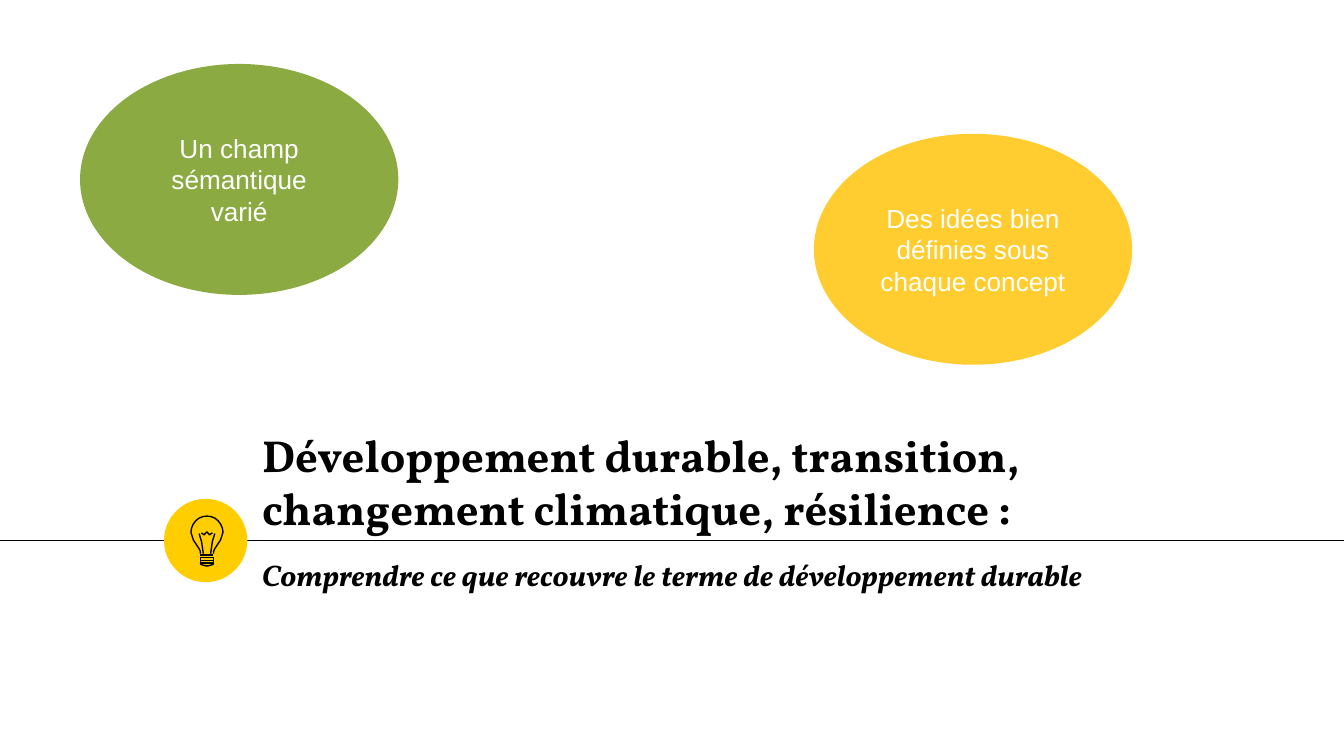
"""Build a section slide with a title, a light bulb badge and two idea bubbles."""
from dataclasses import dataclass
from typing import Any

import pptx
import pptx.dml.color
import pptx.enum.shapes
import pptx.enum.text
import pptx.oxml
import pptx.util

CELL = pptx.util.Inches(0.1)
COLUMNS, ROWS = 100, 56.25
RULE_ROW = 40.22
TEXT_COLUMN, TEXT_WIDTH = 18.5, 77.7
BULB_AXIS = 15.4
BLACK, WHITE, GOLD = "000000", "FFFFFF", "FFCD00"
ALIGN = pptx.enum.text.PP_ALIGN
ANCHOR = pptx.enum.text.MSO_ANCHOR


@dataclass(frozen=True)
class Box:
    left: float
    top: float
    width: float
    height: float


@dataclass(frozen=True)
class Bubble:
    text: str
    box: Box
    color: str


@dataclass(frozen=True)
class Stroke:
    points: tuple[tuple[float, float], ...]
    closed: bool = False


BUBBLES = (
    Bubble("Un champ sémantique varié", Box(6.1, 4.9, 23.4, 16.9), "8BAB42"),
    Bubble("Des idées bien définies sous chaque concept", Box(60.7, 10.1, 23.4, 16.9), "FFCD2F"),
)


def mirrored(half: tuple[tuple[float, float], ...], closed: bool = False) -> Stroke:
    """Complete a half outline, given as offsets from the bulb axis."""
    left = tuple((BULB_AXIS - offset, row) for offset, row in half)
    right = tuple((BULB_AXIS + offset, row) for offset, row in reversed(half))
    return Stroke(left + right, closed)


GLASS = mirrored((
    (0.48, 41.2), (0.5, 41), (0.6, 40.8), (0.8, 40.5), (1, 40.2), (1.1, 39.9),
    (1.19, 39.6), (1.15, 39.3), (1.02, 39), (0.83, 38.75), (0.6, 38.56),
    (0.31, 38.44), (0, 38.4)))
THREADS = tuple(
    mirrored(((0.48, top), (0.48, top + 0.2)), closed=True) for top in (41.5, 41.7))
CAP = mirrored(((0.48, 41.9), (0.45, 42), (0.1, 42.1)), closed=True)
WIRES = tuple(
    Stroke(tuple((BULB_AXIS + side * offset, row)
                 for offset, row in ((0.58, 39.7), (0.4, 40.3), (0.27, 41.2))))
    for side in (-1, 1))
FILAMENT = mirrored(((0.41, 39.65), (0.2, 39.8), (0.03, 39.6)))
BULB = (GLASS, *THREADS, CAP, *WIRES, FILAMENT)


def cells(count: float) -> int:
    """Convert grid cells to a length."""
    return pptx.util.Emu(round(count * CELL))


def rgb(color: str) -> pptx.dml.color.RGBColor:
    """Convert a hex string to a colour."""
    return pptx.dml.color.RGBColor.from_string(color)


def place(shape: Any, box: Box) -> None:
    """Move and size a shape on the grid."""
    shape.left, shape.top = cells(box.left), cells(box.top)
    shape.width, shape.height = cells(box.width), cells(box.height)


def write(shape: Any, text: str, size: float, font_name: str, color: str,
          align: Any, anchor: Any, bold: bool = False, italic: bool = False) -> None:
    """Put one formatted paragraph in a shape."""
    frame = shape.text_frame
    frame.text = text
    frame.word_wrap = True
    frame.auto_size = pptx.enum.text.MSO_AUTO_SIZE.NONE
    frame.vertical_anchor = anchor
    frame.margin_left = frame.margin_right = cells(1)
    frame.margin_top = frame.margin_bottom = cells(1)
    paragraph = frame.paragraphs[0]
    paragraph.alignment = align
    font = paragraph.runs[0].font
    font.size, font.name = pptx.util.Pt(size), font_name
    font.bold, font.italic = bold, italic
    font.color.rgb = rgb(color)


def add_ellipse(slide: Any, box: Box, color: str, line_width: float = 0) -> Any:
    """Draw a filled ellipse, outlined in its own colour if a width is given."""
    shape = slide.shapes.add_shape(pptx.enum.shapes.MSO_SHAPE.OVAL, 0, 0, 0, 0)
    place(shape, box)
    shape.shadow.inherit = False
    shape.fill.solid()
    shape.fill.fore_color.rgb = rgb(color)
    if line_width:
        shape.line.color.rgb = rgb(color)
        shape.line.width = pptx.util.Pt(line_width)
    else:
        shape.line.fill.background()
    return shape


def ink(shape: Any) -> None:
    """Give a shape or connector a thin black line."""
    shape.line.color.rgb = rgb(BLACK)
    shape.line.width = pptx.util.Pt(0.75)


def add_level_line(shapes: Any, start: float, end: float, row: float) -> None:
    """Draw a horizontal line between two columns."""
    line = shapes.add_connector(pptx.enum.shapes.MSO_CONNECTOR.STRAIGHT,
                                cells(start), cells(row), cells(end), cells(row))
    ink(line)
    properties = line._element.spPr
    properties.append(properties.makeelement(pptx.oxml.ns.qn("a:effectLst"), {}))


def add_stroke(shapes: Any, stroke: Stroke) -> None:
    """Draw an unfilled outline through the points of a stroke."""
    points = [(cells(column), cells(row)) for column, row in stroke.points]
    builder = shapes.build_freeform(*points[0])
    builder.add_line_segments(points[1:], close=stroke.closed)
    shape = builder.convert_to_shape()
    shape.shadow.inherit = False
    shape.fill.background()
    ink(shape)


def main() -> None:
    """Build and save the slide."""
    presentation = pptx.Presentation()
    presentation.slide_width = cells(COLUMNS)
    presentation.slide_height = cells(ROWS)
    slide = presentation.slides.add_slide(presentation.slide_layouts.get_by_name("Title Only"))

    title = slide.shapes.title
    place(title, Box(TEXT_COLUMN, 31.6, TEXT_WIDTH, 9.2))
    write(title, "Développement durable, transition, changement climatique, résilience :",
          24, "Vollkorn", BLACK, ALIGN.LEFT, ANCHOR.BOTTOM, bold=True)

    add_level_line(slide.shapes, 0, COLUMNS, RULE_ROW)
    add_ellipse(slide, Box(12.2, RULE_ROW - 3.1, 6.2, 6.2), GOLD)
    bulb = slide.shapes.add_group_shape()
    for stroke in BULB:
        add_stroke(bulb.shapes, stroke)
    add_level_line(bulb.shapes, BULB_AXIS - 0.48, BULB_AXIS + 0.48, 41.3)

    subtitle = slide.shapes.add_textbox(0, 0, 0, 0)
    place(subtitle, Box(TEXT_COLUMN, 40.5, TEXT_WIDTH, 4.6))
    write(subtitle, "Comprendre ce que recouvre le terme de développement durable",
          16, "Vollkorn", BLACK, ALIGN.LEFT, ANCHOR.BOTTOM, bold=True, italic=True)

    for bubble in BUBBLES:
        shape = add_ellipse(slide, bubble.box, bubble.color, line_width=2)
        write(shape, bubble.text, 14, "Arial", WHITE, ALIGN.CENTER, ANCHOR.MIDDLE)

    presentation.save("out.pptx")


if __name__ == "__main__":
    main()
